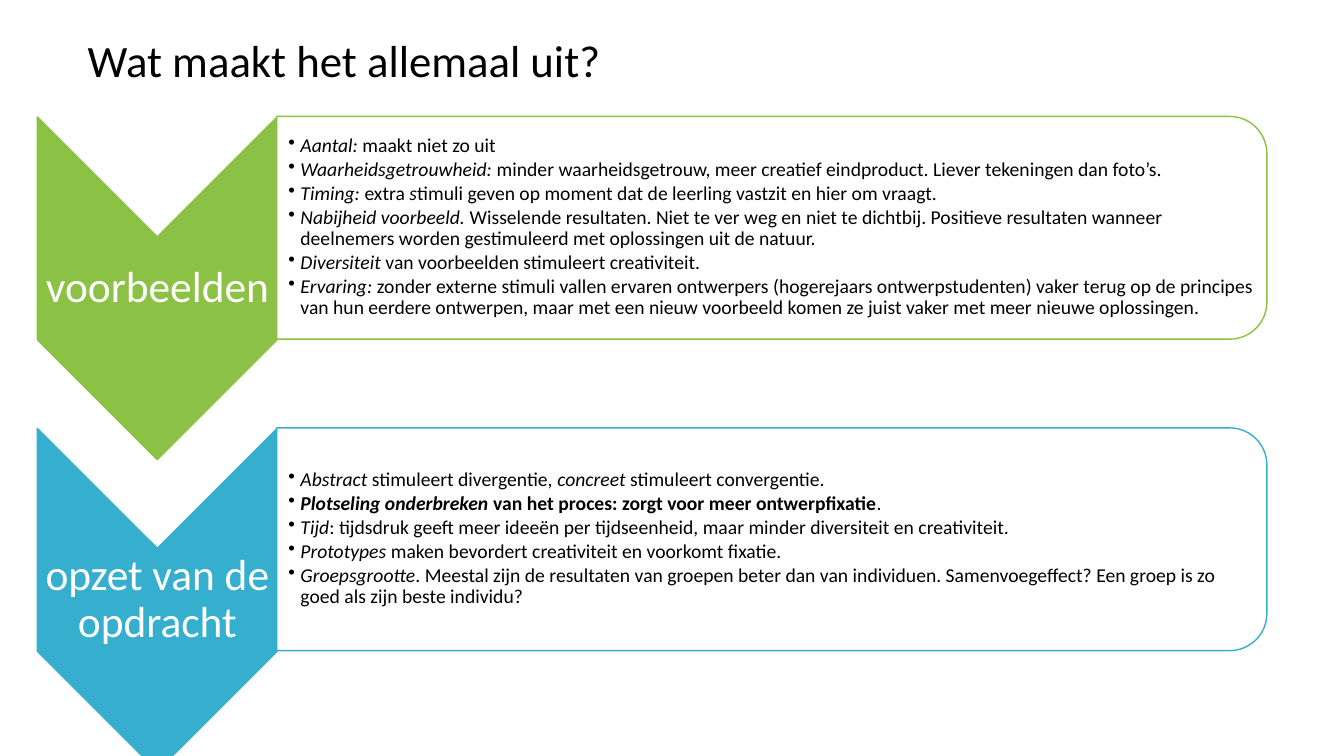
import pptx
import pptx.dml.color
import pptx.enum.shapes
import pptx.enum.text
import pptx.oxml.ns
import pptx.util
from lxml import etree

Inches = pptx.util.Inches
Pt = pptx.util.Pt
SHAPE = pptx.enum.shapes.MSO_SHAPE
ALIGN = pptx.enum.text.PP_ALIGN
COLORS = {"green": "8BC145", "blue": "36AFCE", "white": "FFFFFF", "black": "000000"}
ROW_PITCH = 3.09

# Each run is its text and its style: "i" italic, "b" bold, "bi" both
SECTIONS = [
    ("voorbeelden", "green", [
        [("Aantal: ", "i"), ("maakt niet zo uit", "")],
        [("Waarheidsgetrouwheid: ", "i"),
         ("minder waarheidsgetrouw, meer creatief eindproduct. "
          "Liever tekeningen dan foto’s.", "")],
        [("Timing: ", "i"), ("extra", ""), (" s", "i"),
         ("timuli geven op moment dat de leerling vastzit en hier om vraagt.", "")],
        [("Nabijheid voorbeeld. ", "i"),
         ("Wisselende resultaten. Niet te ver weg en niet te dichtbij. Positieve resultaten "
          "wanneer deelnemers worden gestimuleerd met oplossingen uit de natuur.", "")],
        [("Diversiteit", "i"), (" van voorbeelden stimuleert creativiteit.", "")],
        [("Ervaring: ", "i"),
         ("zonder externe stimuli vallen ervaren ontwerpers (hogerejaars ontwerpstudenten) "
          "vaker terug op de principes van hun eerdere ontwerpen, maar met een nieuw voorbeeld "
          "komen ze juist vaker met meer nieuwe oplossingen.", "")],
    ]),
    ("opzet van de opdracht", "blue", [
        [("Abstract", "i"), (" stimuleert divergentie, ", ""),
         ("concreet", "i"), (" stimuleert convergentie.", "")],
        [("Plotseling onderbreken", "bi"),
         (" van het proces: zorgt voor meer ontwerpfixatie", "b"), (".", "")],
        [("Tijd", "i"),
         (": tijdsdruk geeft meer ideeën per tijdseenheid, "
          "maar minder diversiteit en creativiteit.", "")],
        [("Prototypes", "i"), (" maken bevordert creativiteit en voorkomt fixatie.", "")],
        [("Groepsgrootte", "i"),
         (". Meestal zijn de resultaten van groepen beter dan van individuen. "
          "Samenvoegeffect? Een groep is zo goed als zijn beste individu?", "")],
    ]),
]

presentation = pptx.Presentation()
presentation.slide_width = Inches(13.33)
presentation.slide_height = Inches(7.5)
slide = presentation.slides.add_slide(presentation.slide_layouts[5])


def rgb(name):
    return pptx.dml.color.RGBColor.from_string(COLORS[name])


def style_paragraph(paragraph, size, color, alignment):
    paragraph.alignment = alignment
    paragraph.line_spacing = 0.9
    paragraph.font.name = "Calibri"
    paragraph.font.size = Pt(size)
    paragraph.font.color.rgb = rgb(color)


title = slide.shapes.title
title.left, title.top = Inches(0.77), Inches(-0.1)
title.width, title.height = Inches(11.5), Inches(1.45)
title.text_frame.text = "Wat maakt het allemaal uit?"
title.text_frame.vertical_anchor = pptx.enum.text.MSO_ANCHOR.MIDDLE
style_paragraph(title.text_frame.paragraphs[0], 32, "black", ALIGN.LEFT)

for row, (heading, color, bullets) in enumerate(SECTIONS):
    offset = row * ROW_PITCH

    chevron = slide.shapes.add_shape(
        SHAPE.CHEVRON, Inches(-0.14), Inches(1.67 + offset), Inches(3.4), Inches(2.38))
    panel = slide.shapes.add_shape(
        SHAPE.ROUND_2_SAME_RECTANGLE,
        Inches(6.55), Inches(-2.65 + offset), Inches(2.21), Inches(9.82))
    for shape, fill in ((chevron, color), (panel, "white")):
        shape.rotation = 90
        shape.shadow.inherit = False
        shape.fill.solid()
        shape.fill.fore_color.rgb = rgb(fill)
        shape.line.color.rgb = rgb(color)
        shape.line.width = Pt(1)
    panel_color = panel.fill._xPr.find(".//" + pptx.oxml.ns.qn("a:srgbClr"))
    etree.SubElement(panel_color, pptx.oxml.ns.qn("a:alpha"), val="90000")

    label = slide.shapes.add_textbox(
        Inches(0.37), Inches(2.35 + offset), Inches(2.38), Inches(1.02))
    body = slide.shapes.add_textbox(
        Inches(2.75), Inches(1.26 + offset), Inches(9.71), Inches(1.99))
    for box, left_inset, inset in ((label, 0.02, 0.02), (body, 0.11, 0.01)):
        frame = box.text_frame
        frame.word_wrap = True
        frame.vertical_anchor = pptx.enum.text.MSO_ANCHOR.MIDDLE
        frame.margin_left = Inches(left_inset)
        frame.margin_top = frame.margin_right = frame.margin_bottom = Inches(inset)

    label.text_frame.text = heading
    style_paragraph(label.text_frame.paragraphs[0], 31, "white", ALIGN.CENTER)

    for index, runs in enumerate(bullets):
        frame = body.text_frame
        paragraph = frame.add_paragraph() if index else frame.paragraphs[0]
        properties = paragraph._p.get_or_add_pPr()
        properties.set("marL", str(Inches(0.12)))
        properties.set("indent", str(Inches(-0.12)))
        etree.SubElement(properties, pptx.oxml.ns.qn("a:buChar"), char="•")
        paragraph.level = 1
        paragraph.space_after = Pt(2)
        style_paragraph(paragraph, 14, "black", ALIGN.LEFT)
        for text, style in runs:
            run = paragraph.add_run()
            run.text = text
            run.font.italic = "i" in style
            run.font.bold = "b" in style

presentation.save("out.pptx")
